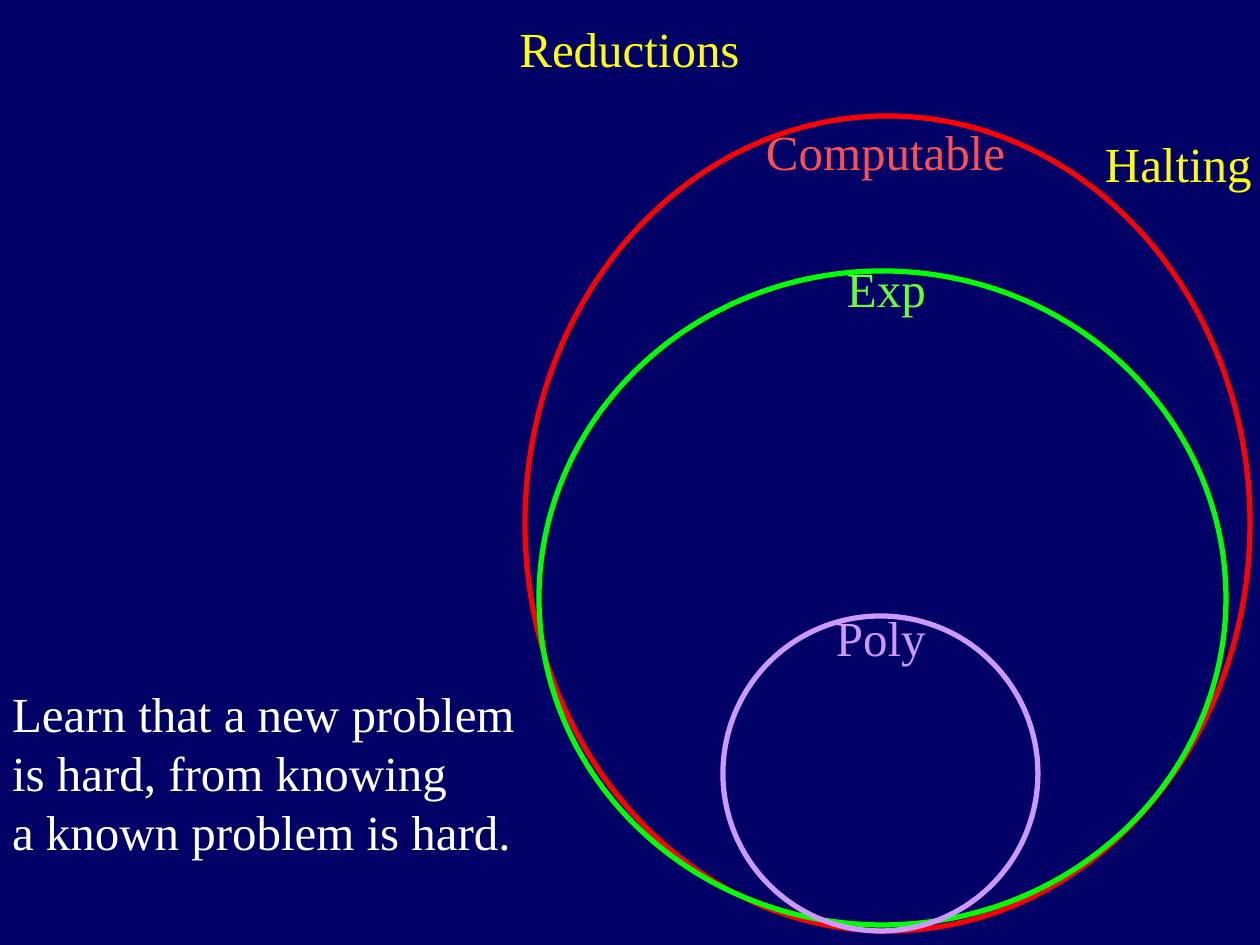
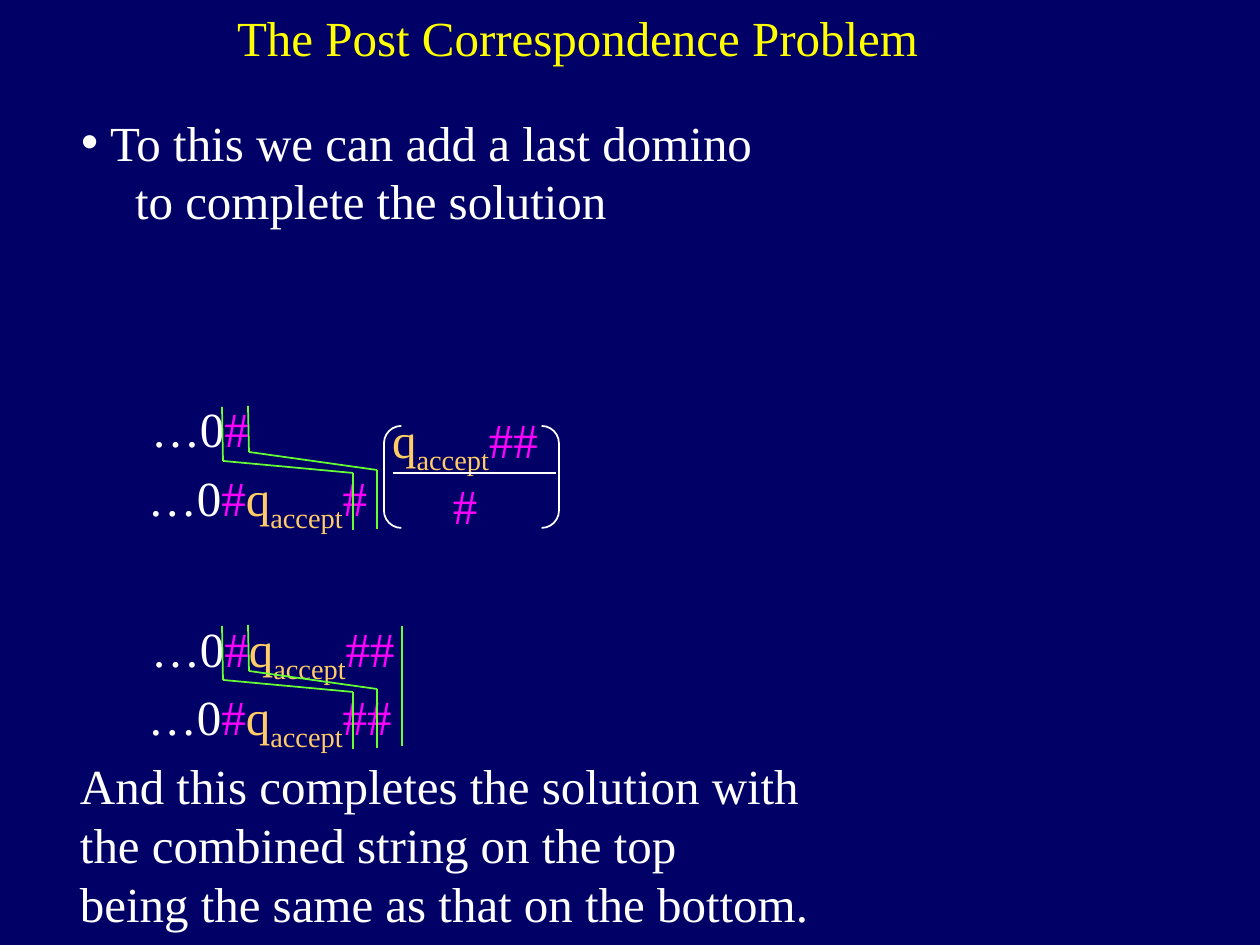
from itertools import pairwise

from lxml.etree import SubElement
from pptx import Presentation
from pptx.dml.color import RGBColor
from pptx.enum.shapes import MSO_CONNECTOR, MSO_SHAPE
from pptx.enum.text import MSO_ANCHOR, MSO_AUTO_SIZE, PP_ALIGN
from pptx.oxml.ns import qn
from pptx.util import Emu, Pt

PX = 914400 // 126
FONT = "Times New Roman"
SIZE = 28
INSET = 13
WIDE_INSET = 38
COLORS = {
    "background": "000066",
    "title": "FFFF00",
    "text": "FFFFFF",
    "computable_ring": "FF0000",
    "computable_label": "FF5050",
    "exp_ring": "00FF00",
    "exp_label": "66FF33",
    "poly": "CC99FF",
    "marker": "FF00FF",
    "state": "FFCC66",
    "match": "66FF33",
}
PREFIX = ("…0", "text", False)
MARKER = ("#", "marker", False)
END = ("##", "marker", False)
STATE = [("q", "state", False), ("accept", "state", True)]


def px(value):
    """Turn a length in px into EMU."""
    return Emu(value * PX)


def rgb(name):
    """Look up a named colour."""
    return RGBColor.from_string(COLORS[name])


def add_run(paragraph, text, color, subscript=False):
    """Add one run in the shared font."""
    run = paragraph.add_run()
    run.text = text
    run.font.name = FONT
    run.font.size = Pt(SIZE)
    run.font.color.rgb = rgb(color)
    if subscript:
        run._r.get_or_add_rPr().set("baseline", "-25000")


def add_lines(paragraph, lines, color="text"):
    """Add lines of text parted by line breaks."""
    for index, line in enumerate(lines):
        if index:
            paragraph.add_line_break()
        add_run(paragraph, line, color)


def place(shape, box):
    """Move a shape to a box of left, top, width and height."""
    shape.left, shape.top, shape.width, shape.height = map(px, box)


def set_frame(frame, inset=INSET, wrap=True):
    """Set the side insets, wrapping and fixed size of a text frame."""
    frame.margin_left = frame.margin_right = px(inset)
    frame.margin_top = frame.margin_bottom = px(6)
    frame.word_wrap = wrap
    frame.auto_size = MSO_AUTO_SIZE.NONE


def set_bullet(paragraph, margin, character=None):
    """Indent a paragraph, with a hanging bullet or with none."""
    properties = paragraph._p.get_or_add_pPr()
    properties.set("marL", str(px(margin)))
    properties.set("indent", str(px(-margin if character else 0)))
    if character:
        SubElement(properties, qn("a:buChar")).set("char", character)
    else:
        SubElement(properties, qn("a:buNone"))
    paragraph.space_before = Pt(0)


def add_text(slide, box, paragraphs, inset=INSET, wrap=True, align=PP_ALIGN.LEFT):
    """Add a text box whose paragraphs are lists of runs."""
    shape = slide.shapes.add_textbox(*map(px, box))
    frame = shape.text_frame
    set_frame(frame, inset, wrap)
    for index, runs in enumerate(paragraphs):
        paragraph = frame.add_paragraph() if index else frame.paragraphs[0]
        paragraph.alignment = align
        for run in runs:
            add_run(paragraph, *run)
    return frame


def add_outline(slide, kind, box, color, width):
    """Add an unfilled preset shape."""
    shape = slide.shapes.add_shape(kind, *map(px, box))
    shape.shadow.inherit = False
    shape.fill.background()
    shape.line.color.rgb = rgb(color)
    shape.line.width = Pt(width)
    return shape


def add_line(slide, start, end, color):
    """Add a thin straight line."""
    line = slide.shapes.add_connector(MSO_CONNECTOR.STRAIGHT, *map(px, (*start, *end)))
    line.line.color.rgb = rgb(color)
    line.line.width = Pt(1)
    SubElement(line._element.spPr, qn("a:effectLst"))


def add_slide(presentation, title, title_box):
    """Add a slide with a centred title and a body placeholder."""
    slide = presentation.slides.add_slide(presentation.slide_layouts[1])
    shape = slide.shapes.title
    place(shape, title_box)
    set_frame(shape.text_frame)
    shape.text_frame.vertical_anchor = MSO_ANCHOR.MIDDLE
    paragraph = shape.text_frame.paragraphs[0]
    paragraph.alignment = PP_ALIGN.CENTER
    add_run(paragraph, title, "title")
    return slide


def place_body(slide, box, inset):
    """Place the body placeholder and return its text frame."""
    body = slide.placeholders[1]
    place(body, box)
    set_frame(body.text_frame, inset)
    return body.text_frame


def draw_classes(slide, left, top):
    """Draw the nested problem classes with their labels."""
    classes = [
        ("Computable", "computable_ring", "computable_label", (0, 0, 725, 815), (203, 0, 315, 72)),
        ("Exp", "exp_ring", "exp_label", (14, 155, 687, 654), (284, 136, 155, 72)),
        ("Poly", "poly", "poly", (198, 500, 315, 315), (273, 486, 165, 72)),
    ]
    for name, ring_color, label_color, ring, label in classes:
        ring_box, label_box = [(left + x, top + y, w, h) for x, y, w, h in (ring, label)]
        add_outline(slide, MSO_SHAPE.OVAL, ring_box, ring_color, 3)
        add_text(slide, label_box, [[(name, label_color)]], WIDE_INSET, wrap=False)


def draw_match(slide, left, top, top_runs, bottom_runs):
    """Draw the top and bottom strings with the lines that match them."""
    add_text(slide, (left + 3, top, 514, 72), [top_runs], WIDE_INSET)
    add_text(slide, (left, top + 68, 484, 72), [bottom_runs], WIDE_INSET)
    chains = [
        [(112, 14), (113, 68), (243, 80), (243, 137)],
        [(138, 13), (139, 59), (267, 77), (267, 136)],
    ]
    for chain in chains:
        points = [(left + x, top + y) for x, y in chain]
        for start, end in pairwise(points):
            add_line(slide, start, end, "match")


def draw_domino(slide, left, top):
    """Draw the last domino as a bracketed fraction."""
    add_text(slide, (left - 11, top - 23, 184, 131), [[*STATE, END], [MARKER]],
             wrap=False, align=PP_ALIGN.CENTER)
    add_line(slide, (left + 9, top + 47), (left + 172, top + 47), "text")
    bracket = add_outline(slide, MSO_SHAPE.DOUBLE_BRACKET, (left, top, 175, 102), "text", 1)
    bracket.adjustments[0] = 0.17


def build_reductions(presentation):
    """Build the slide on reductions."""
    slide = add_slide(presentation, "Reductions", (94, 0, 1071, 95))
    paragraph = place_body(slide, (0, 678, 540, 190), 12).paragraphs[0]
    set_bullet(paragraph, 0)
    add_lines(paragraph, ["Learn that a new problem", "is hard, from knowing",
                          "a known problem is hard."])
    add_text(slide, (1092, 127, 174, 72), [[("Halting", "title")]], wrap=False)
    draw_classes(slide, 525, 116)


def build_correspondence(presentation):
    """Build the slide on the Post correspondence problem."""
    slide = add_slide(presentation, "The Post Correspondence Problem", (42, 0, 1071, 74))
    frame = place_body(slide, (43, 106, 1197, 131), WIDE_INSET)
    first, second = frame.paragraphs[0], frame.add_paragraph()
    set_bullet(first, 29, "•")
    add_run(first, "To this we can add a last domino", "text")
    set_bullet(second, 54)
    add_run(second, "to complete the solution", "text")

    bottom_start = [PREFIX, MARKER, *STATE]
    draw_match(slide, 110, 393, [PREFIX, MARKER], [*bottom_start, MARKER])
    draw_domino(slide, 384, 426)
    draw_match(slide, 110, 612, [*bottom_start, END], [*bottom_start, END])
    add_line(slide, (402, 626), (402, 746), "match")

    closing = add_text(slide, (67, 750, 861, 192), [[]])
    add_lines(closing.paragraphs[0], ["And this completes the solution with",
                                      "the combined string on the top"])
    add_run(closing.add_paragraph(), "being the same as that on the bottom.", "text")


def main():
    """Build and save the presentation."""
    presentation = Presentation()
    presentation.slide_width, presentation.slide_height = px(1260), px(945)
    fill = presentation.slide_master.background.fill
    fill.solid()
    fill.fore_color.rgb = rgb("background")
    build_reductions(presentation)
    build_correspondence(presentation)
    presentation.save("out.pptx")


if __name__ == "__main__":
    main()
